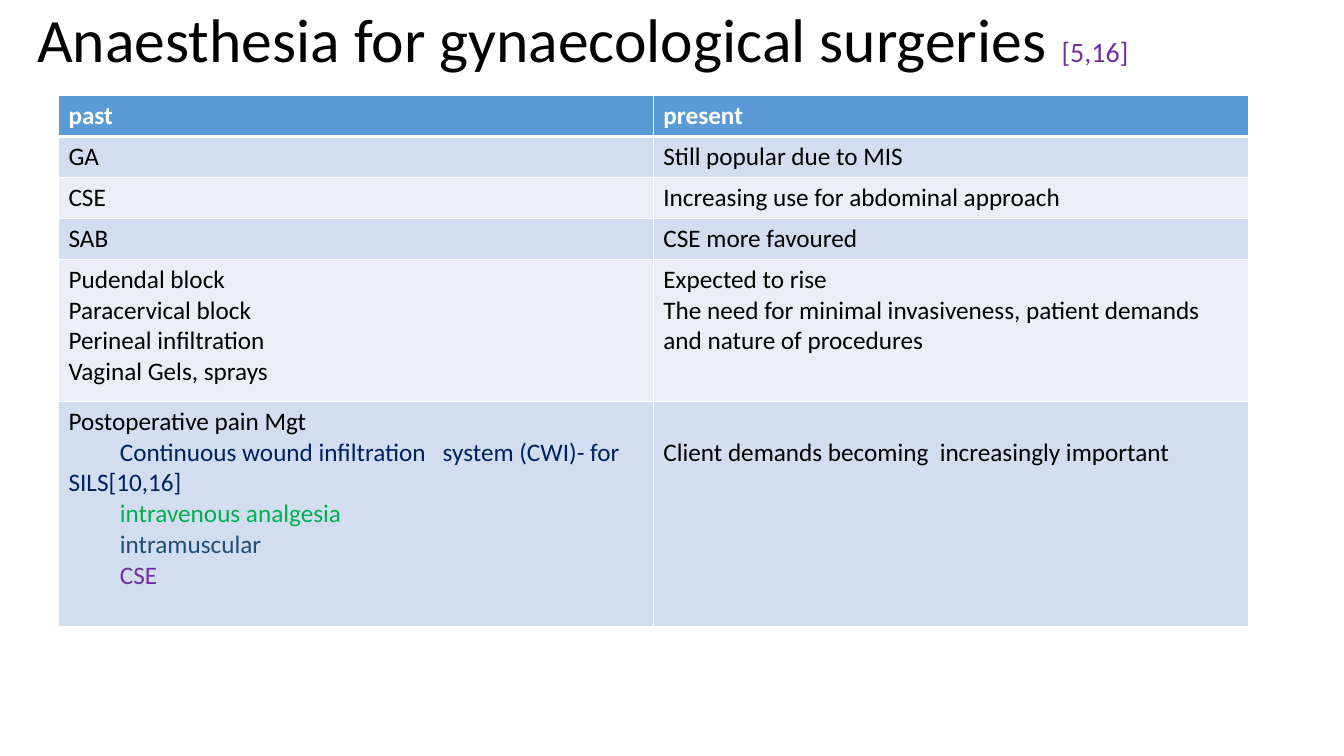
from lxml import etree
from pptx import Presentation
from pptx.dml.color import RGBColor
from pptx.enum.text import MSO_ANCHOR, MSO_AUTO_SIZE, PP_ALIGN
from pptx.oxml.ns import qn
from pptx.util import Inches, Pt

LEFT = PP_ALIGN.LEFT
MIDDLE = MSO_ANCHOR.MIDDLE
NO_FIT = MSO_AUTO_SIZE.NONE

FONT = "Calibri"
BLACK = RGBColor(0x00, 0x00, 0x00)
WHITE = RGBColor(0xFF, 0xFF, 0xFF)
PURPLE = RGBColor(0x70, 0x30, 0xA0)
NAVY = RGBColor(0x00, 0x20, 0x60)
GREEN = RGBColor(0x00, 0xB0, 0x50)
STEEL = RGBColor(0x1F, 0x4E, 0x79)
HEAD = RGBColor(0x5B, 0x9B, 0xD5)
BANDS = (RGBColor(0xEA, 0xEF, 0xF7), RGBColor(0xD2, 0xDE, 0xEF))

HEIGHTS = (0.4, 0.4, 0.4, 0.4, 1.41, 2.23)
ROWS = (
    (["past"], ["present"]),
    (["GA"], ["Still popular due to MIS"]),
    (["CSE"], ["Increasing use for abdominal approach"]),
    (["SAB"], ["CSE more favoured"]),
    (["Pudendal block", "Paracervical block", "Perineal infiltration",
      "Vaginal Gels, sprays"],
     ["Expected to rise",
      "The need for minimal invasiveness, patient demands "
      "and nature of procedures"]),
    (["Postoperative pain Mgt",
      ("Continuous wound infiltration   system (CWI)- for SILS[10,16]", NAVY),
      ("intravenous analgesia", GREEN),
      ("intramuscular", STEEL),
      ("CSE", PURPLE)],
     ["Client demands becoming  increasingly important"]),
)


def set_font(font, size, color, bold=False):
    font.name = FONT
    font.size = Pt(size)
    font.color.rgb = color
    font.bold = bold


def add_title(slide):
    title = slide.shapes.title
    title.left, title.top = Inches(0.27), Inches(0)
    title.width, title.height = Inches(12.27), Inches(0.85)
    frame = title.text_frame
    frame.auto_size = NO_FIT
    frame.word_wrap = True
    frame.vertical_anchor = MIDDLE
    para = frame.paragraphs[0]
    para.alignment = LEFT
    para.line_spacing = 0.9
    parts = (("Anaesthesia for gynaecological surgeries ", 44, BLACK),
             ("[5,16]", 20, PURPLE))
    for text, size, color in parts:
        run = para.add_run()
        run.text = text
        set_font(run.font, size, color)


def add_edges(cell, base):
    """Draw white borders, with the bottom one base points wide."""
    props = cell._tc.get_or_add_tcPr()
    for side, width in (("L", 1), ("R", 1), ("T", 1), ("B", base)):
        line = etree.SubElement(props, qn(f"a:ln{side}"), w=str(Pt(width)))
        fill = etree.SubElement(line, qn("a:solidFill"))
        etree.SubElement(fill, qn("a:srgbClr"), val=str(WHITE))


def fill_cell(cell, lines, row):
    """Write the lines; a (text, colour) pair is an indented line."""
    header = row == 0
    add_edges(cell, 3 if header or row is None else 1)
    cell.fill.solid()
    cell.fill.fore_color.rgb = HEAD if header else BANDS[row % 2]
    frame = cell.text_frame
    for index, line in enumerate(lines):
        para = frame.add_paragraph() if index else frame.paragraphs[0]
        color = WHITE if header else BLACK
        if isinstance(line, tuple):
            line, color = line
            props = para._p.get_or_add_pPr()
            props.set("marL", "0")
            props.set("indent", str(Inches(0.51)))
        para.text = line
        set_font(para.font, 18, color, header)


def add_grid(slide):
    frame = slide.shapes.add_table(len(ROWS), 2, Inches(0.58), Inches(0.95),
                                   Inches(11.8), Inches(sum(HEIGHTS)))
    table = frame.table
    for row, (height, texts) in enumerate(zip(HEIGHTS, ROWS)):
        table.rows[row].height = Inches(height)
        for col, lines in enumerate(texts):
            fill_cell(table.cell(row, col), lines, row)
    # The last remark lines up with the second line of its neighbour.
    table.cell(len(ROWS) - 1, 1).margin_top = Inches(0.36)


def main():
    deck = Presentation()
    deck.slide_width, deck.slide_height = Inches(13.33), Inches(7.5)
    slide = deck.slides.add_slide(deck.slide_layouts[5])
    add_title(slide)
    add_grid(slide)
    deck.save("out.pptx")


if __name__ == "__main__":
    main()
